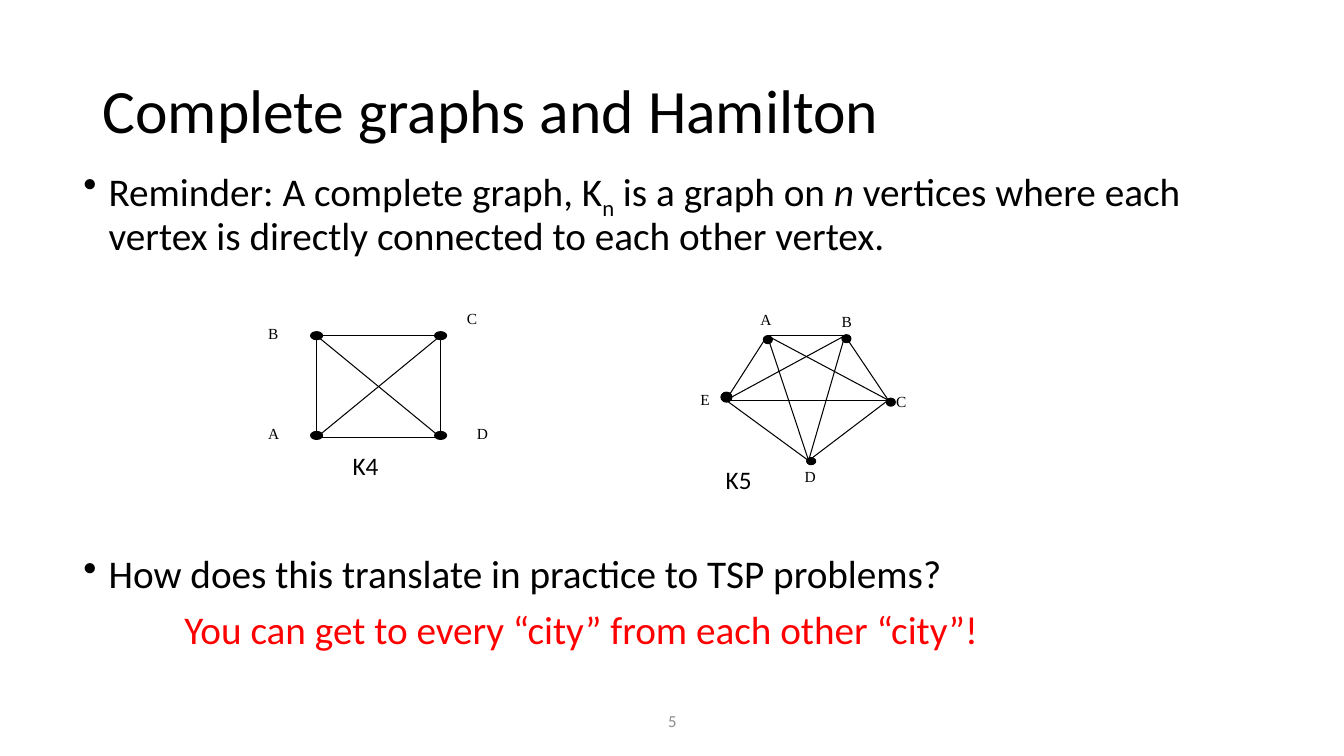
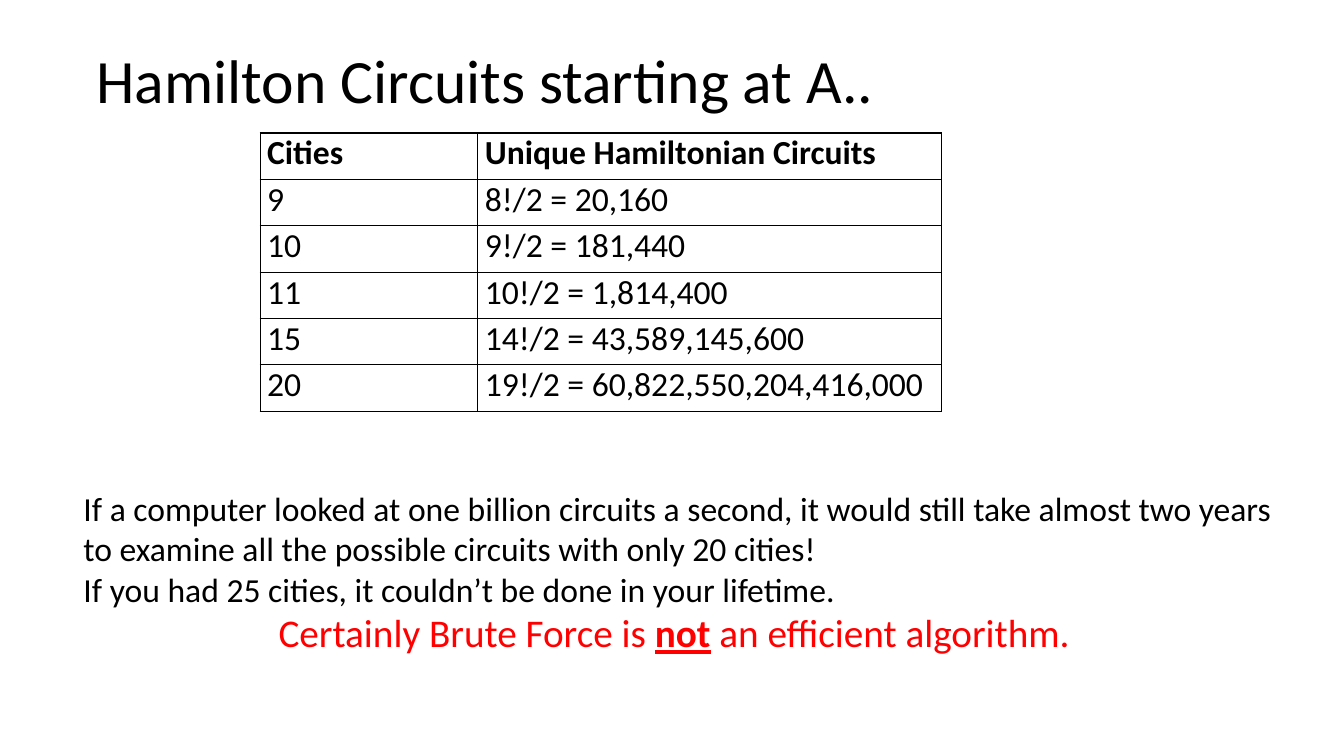
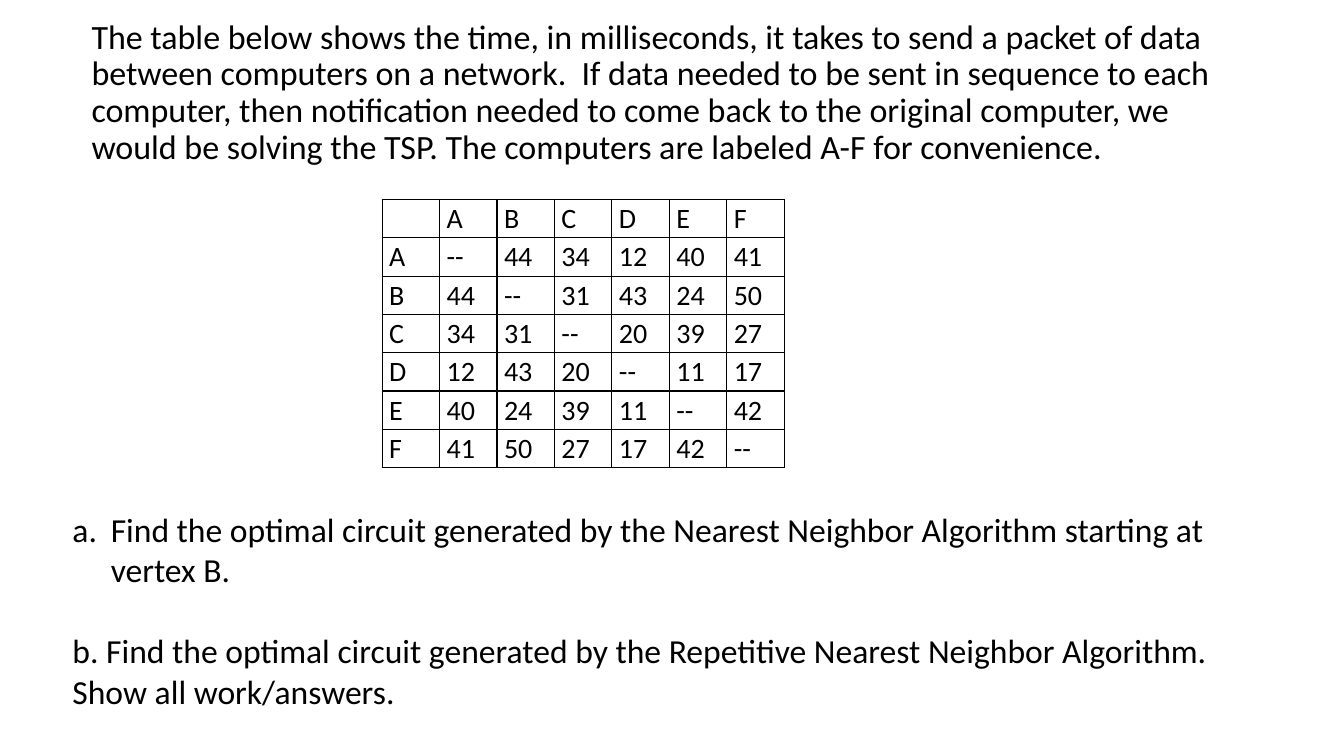
from dataclasses import dataclass
from itertools import combinations
from typing import NamedTuple

from lxml.etree import SubElement
from pptx import Presentation
from pptx.dml.color import RGBColor
from pptx.enum.shapes import MSO_CONNECTOR, MSO_SHAPE
from pptx.enum.text import MSO_ANCHOR, PP_ALIGN
from pptx.oxml.ns import qn
from pptx.util import Pt

EMU_PER_PX = 9144  # 100 px to the inch
BLANK_LAYOUT = 6


@dataclass(frozen=True)
class Theme:
    black: RGBColor = RGBColor(0x00, 0x00, 0x00)
    white: RGBColor = RGBColor(0xFF, 0xFF, 0xFF)
    red: RGBColor = RGBColor(0xFF, 0x00, 0x00)
    gray: RGBColor = RGBColor(0x8C, 0x8C, 0x8C)
    font: str = "Calibri"
    vertex_font: str = "Times New Roman"
    title: float = 44
    long_title: float = 24.3
    body: float = 28
    note: float = 24
    matrix: float = 20
    caption: float = 18
    footer: float = 12
    vertex: float = 11
    edge_width: float = 0.75
    border_width: float = 1
    tight: float = 0.9


THEME = Theme()


@dataclass
class Para:
    """A paragraph; runs are (text, style) pairs, indent and hanging are px."""
    runs: list
    size: float
    color: RGBColor = THEME.black
    font: str = THEME.font
    align: PP_ALIGN = PP_ALIGN.LEFT
    line_spacing: float = 1.0
    before: float = 0
    indent: int = 0
    hanging: int = 0
    bullet: tuple = ()


class Vertex(NamedTuple):
    """point is where edges meet; dot and label are boxes."""
    letter: str
    point: tuple
    dot: tuple
    label: tuple


K4_VERTICES = [
    Vertex("A", (314, 434), (308, 428, 12, 8), (266, 421, 28, 27)),
    Vertex("B", (314, 333), (308, 329, 12, 8), (266, 322, 35, 29)),
    Vertex("C", (437, 333), (431, 329, 12, 8), (463, 307, 50, 32)),
    Vertex("D", (437, 434), (431, 428, 12, 8), (473, 421, 28, 27)),
]
K5_VERTICES = [
    Vertex("A", (761, 333), (757, 333, 9, 8), (752, 306, 22, 23)),
    Vertex("B", (838, 333), (835, 332, 9, 8), (833, 308, 17, 22)),
    Vertex("C", (881, 397), (879, 395, 9, 8), (887, 387, 15, 20)),
    Vertex("D", (802, 457), (800, 454, 9, 7), (796, 461, 22, 21)),
    Vertex("E", (720, 397), (715, 389, 11, 10), (693, 385, 15, 19)),
]
CIRCUIT_COUNTS = [
    ["Cities", "Unique Hamiltonian Circuits"],
    ["9", "8!/2 = 20,160"],
    ["10", "9!/2 = 181,440"],
    ["11", "10!/2 = 1,814,400"],
    ["15", "14!/2 = 43,589,145,600"],
    ["20", "19!/2 = 60,822,550,204,416,000"],
]
PACKET_TIMES = [
    ["", "A", "B", "C", "D", "E", "F"],
    ["A", "--", "44", "34", "12", "40", "41"],
    ["B", "44", "--", "31", "43", "24", "50"],
    ["C", "34", "31", "--", "20", "39", "27"],
    ["D", "12", "43", "20", "--", "11", "17"],
    ["E", "40", "24", "39", "11", "--", "42"],
    ["F", "41", "50", "27", "17", "42", "--"],
]


def px(*lengths):
    return [length * EMU_PER_PX for length in lengths]


def set_margins(target, left, top, right, bottom):
    (target.margin_left, target.margin_top,
     target.margin_right, target.margin_bottom) = px(left, top, right, bottom)


def style_run(run, style):
    if style == "italic":
        run.font.italic = True
    elif style == "subscript":
        run.font._element.set("baseline", "-25000")
    elif style == "stressed":
        run.font.bold = run.font.underline = True


def write_paragraph(paragraph, para):
    paragraph.alignment = para.align
    paragraph.line_spacing = para.line_spacing
    paragraph.space_before = Pt(para.before)
    font = paragraph.font
    font.name, font.size = para.font, Pt(para.size)
    font.color.rgb = para.color
    properties = paragraph._p.get_or_add_pPr()
    left, first = px(para.indent, -para.hanging)
    properties.set("marL", str(left))
    properties.set("indent", str(first))
    if para.bullet:
        tag, attribute, value = para.bullet
        bullet = SubElement(properties, qn(tag))
        bullet.set(attribute, value)
        properties.find(qn("a:defRPr")).addprevious(bullet)
    for text, style in para.runs:
        run = paragraph.add_run()
        run.text = text
        style_run(run, style)


def write_text(frame, paras, anchor=MSO_ANCHOR.TOP):
    frame.word_wrap = True
    frame.vertical_anchor = anchor
    for index, para in enumerate(paras):
        paragraph = frame.add_paragraph() if index else frame.paragraphs[0]
        write_paragraph(paragraph, para)


def add_text(shapes, box, paras, anchor=MSO_ANCHOR.TOP):
    write_text(shapes.add_textbox(*px(*box)).text_frame, paras, anchor)


def plain(text, size, **options):
    return Para([(text, "")], size, **options)


def add_title(slide, left, top, text, size=THEME.title):
    add_text(slide.shapes, (left, top, 1150, 145),
             [plain(text, size, line_spacing=THEME.tight)], MSO_ANCHOR.MIDDLE)


def add_dot(shapes, box):
    dot = shapes.add_shape(MSO_SHAPE.OVAL, *px(*box))
    dot.shadow.inherit = False
    dot.fill.solid()
    dot.fill.fore_color.rgb = THEME.black
    dot.line.color.rgb = THEME.black
    dot.line.width = Pt(THEME.edge_width)


def add_edge(shapes, start, end):
    edge = shapes.add_connector(MSO_CONNECTOR.STRAIGHT, *px(*start, *end))
    edge.line.color.rgb = THEME.black
    edge.line.width = Pt(THEME.edge_width)
    SubElement(edge._element.spPr, qn("a:effectLst"))


def add_vertex_label(shapes, vertex, outline, fill, margin):
    label = shapes.add_shape(outline, *px(*vertex.label))
    label.shadow.inherit = False
    label.line.fill.background()
    if fill is None:
        label.fill.background()
    else:
        label.fill.solid()
        label.fill.fore_color.rgb = fill
    set_margins(label.text_frame, margin, margin, margin, margin)
    write_text(label.text_frame,
               [plain(vertex.letter, THEME.vertex, font=THEME.vertex_font)])


def add_complete_graph(slide, vertices, caption, caption_box,
                       outline, fill=None, margin=0):
    """Draws every vertex and an edge between each two, as one group."""
    shapes = slide.shapes.add_group_shape().shapes
    for vertex in vertices:
        add_dot(shapes, vertex.dot)
    for one, other in combinations(vertices, 2):
        add_edge(shapes, one.point, other.point)
    for vertex in vertices:
        add_vertex_label(shapes, vertex, outline, fill, margin)
    add_text(shapes, caption_box, [plain(caption, THEME.caption)])


def add_borders(cell):
    properties = cell._tc.get_or_add_tcPr()
    for side in ("a:lnL", "a:lnR", "a:lnT", "a:lnB"):
        line = SubElement(properties, qn(side), w=str(Pt(THEME.border_width)))
        fill = SubElement(line, qn("a:solidFill"))
        SubElement(fill, qn("a:srgbClr"), val=str(THEME.black))


def add_grid(slide, left, top, widths, row_height, rows, size,
             line_spacing=1.0, bold_header=False):
    box = (left, top, sum(widths), row_height * len(rows))
    table = slide.shapes.add_table(len(rows), len(widths), *px(*box)).table
    table.first_row = table.horz_banding = False
    for column, width in zip(table.columns, px(*widths)):
        column.width = width
    for row_index, texts in enumerate(rows):
        for column_index, text in enumerate(texts):
            cell = table.cell(row_index, column_index)
            set_margins(cell, 7, 0, 7, 0)
            add_borders(cell)
            cell.fill.background()
            paragraph = cell.text_frame.paragraphs[0]
            write_paragraph(paragraph,
                            plain(text, size, line_spacing=line_spacing))
            paragraph.font.bold = bold_header and row_index == 0


def build_complete_graphs(slide):
    bulleted = dict(line_spacing=THEME.tight, indent=25, hanging=25,
                    bullet=("a:buChar", "char", "•"))
    reminder = [
        ("Reminder: A complete graph, K", ""), ("n", "subscript"),
        (" is a graph on ", ""), ("n", "italic"),
        (" vertices where each vertex is directly connected to each other "
         "vertex.", ""),
    ]
    add_text(slide.shapes, (73, 162, 1114, 533), [
        Para(reminder, THEME.body, before=10, **bulleted),
        plain("How does this translate in practice to TSP problems?",
              THEME.body, before=211, **bulleted),
        plain("You can get to every “city” from each other “city”!",
              THEME.body, color=THEME.red, before=10, indent=100,
              line_spacing=THEME.tight),
    ])
    add_text(slide.shapes, (442, 695, 450, 40),
             [plain("5", THEME.footer, color=THEME.gray,
                    align=PP_ALIGN.CENTER)], MSO_ANCHOR.MIDDLE)
    add_complete_graph(slide, K4_VERTICES, "K4", (340, 442, 84, 40),
                       MSO_SHAPE.RECTANGLE, fill=THEME.white)
    add_complete_graph(slide, K5_VERTICES, "K5", (710, 456, 60, 71),
                       MSO_SHAPE.ROUNDED_RECTANGLE, margin=1)
    add_title(slide, 92, 40, "Complete graphs and Hamilton")


def build_circuit_counts(slide):
    add_title(slide, 86, 10, "Hamilton Circuits starting at A..")
    add_grid(slide, 258, 132, [216, 460], 46, CIRCUIT_COUNTS, THEME.note,
             bold_header=True)
    verdict = [("Certainly Brute Force is ", ""), ("not", "stressed"),
               (" an efficient algorithm. ", "")]
    add_text(slide.shapes, (73, 479, 1200, 178), [
        plain("If a computer looked at one billion circuits a second, it "
              "would still take almost two years to examine all the possible "
              "circuits with only 20 cities!", THEME.note),
        plain("If you had 25 cities, it couldn’t be done in your lifetime.",
              THEME.note),
        Para(verdict, THEME.body, color=THEME.red, align=PP_ALIGN.CENTER),
    ])


def build_network_exercise(slide):
    add_title(
        slide, 81, 20,
        "The table below shows the time, in milliseconds, it takes to send a "
        "packet of data between computers on a network.  If data needed to be "
        "sent in sequence to each computer, then notification needed to come "
        "back to the original computer, we would be solving the TSP. The "
        "computers are labeled A-F for convenience.", THEME.long_title)
    add_grid(slide, 379, 198, [57] * 7, 38, PACKET_TIMES, THEME.matrix,
             line_spacing=1.07)
    add_text(slide.shapes, (62, 500, 1169, 212), [
        plain("Find the optimal circuit generated by the Nearest Neighbor "
              "Algorithm starting at vertex B.", THEME.note, indent=38,
              hanging=38, bullet=("a:buAutoNum", "type", "alphaLcPeriod")),
        plain("b. Find the optimal circuit generated by the Repetitive "
              "Nearest Neighbor Algorithm. Show all work/answers.",
              THEME.note, before=29),
    ])


def main():
    presentation = Presentation()
    presentation.slide_width, presentation.slide_height = px(1333, 750)
    layout = presentation.slide_layouts[BLANK_LAYOUT]
    for build in (build_complete_graphs, build_circuit_counts,
                  build_network_exercise):
        build(presentation.slides.add_slide(layout))
    presentation.save("out.pptx")


if __name__ == "__main__":
    main()
